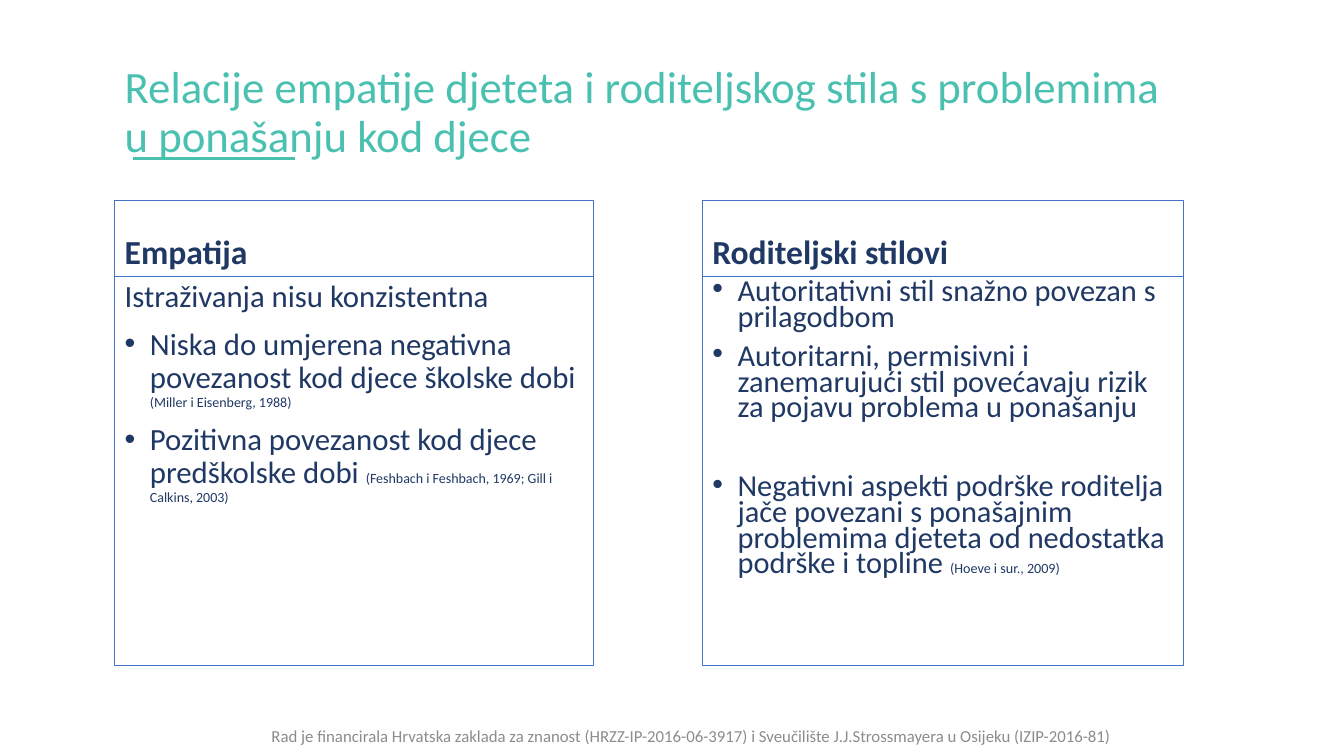
from pptx import Presentation
from pptx.dml.color import RGBColor
from pptx.enum.shapes import MSO_CONNECTOR as Connector
from pptx.enum.text import MSO_ANCHOR as Anchor, PP_ALIGN as Align
from pptx.oxml.ns import qn
from pptx.util import Pt
from lxml import etree

TEAL, NAVY, BLUE, GREY = "4AC1B0", "203864", "4472C4", "8C8C8C"
HEADING_HEIGHT = 54


def color(value):
    """Turn a hex string into a colour."""
    return RGBColor.from_string(value)


def add_box(slide, box, anchor=Anchor.TOP, outline=None):
    """Add a wrapping text box, outlined on request, and return its frame."""
    shape = slide.shapes.add_textbox(*(Pt(length) for length in box))
    if outline:
        shape.line.color.rgb = color(outline)
        shape.line.width = Pt(0.75)
    frame = shape.text_frame
    frame.word_wrap = True
    frame.vertical_anchor = anchor
    return frame


def add_bullet(paragraph):
    """Give a paragraph a hanging round bullet."""
    properties = paragraph._p.get_or_add_pPr()
    properties.set("marL", str(Pt(18)))
    properties.set("indent", str(Pt(-18)))
    etree.SubElement(properties, qn("a:buFont")).set("typeface", "Arial")
    etree.SubElement(properties, qn("a:buChar")).set("char", "•")


def write(frame, text, size, fill, citation="", citation_size=10, bold=False,
          bullet=False, before=0, spacing=0.9, align=Align.LEFT):
    """Write one paragraph, with an optional small citation at its end."""
    paragraph = frame.paragraphs[0]
    if paragraph.runs:
        paragraph = frame.add_paragraph()
    if bullet:
        add_bullet(paragraph)
    paragraph.alignment = align
    paragraph.line_spacing = spacing
    paragraph.space_before = Pt(before)
    for part, points in ((text, size), (citation, citation_size)):
        if part:
            run = paragraph.add_run()
            run.text = part
            run.font.name = "Calibri"
            run.font.size = Pt(points)
            run.font.bold = bold
            run.font.color.rgb = color(fill)


def add_title(slide, box, text):
    """Add the title and the short accent rule near its foot."""
    left, top, width, height = box
    rule_top = top + 84.2
    rule = slide.shapes.add_connector(
        Connector.STRAIGHT, Pt(left + 13), Pt(rule_top), Pt(left + 129), Pt(rule_top))
    rule.line.color.rgb = color(TEAL)
    rule.line.width = Pt(2.25)
    etree.SubElement(rule._element.spPr, qn("a:effectLst"))
    write(add_box(slide, box, Anchor.MIDDLE), text, 32, TEAL)


def add_column(slide, box, heading, items, **text_format):
    """Add a bordered heading with a bordered list below it."""
    left, top, width, height = box
    heading_frame = add_box(slide, (left, top, width, HEADING_HEIGHT), Anchor.BOTTOM, BLUE)
    write(heading_frame, heading, 24, NAVY, bold=True)
    body_box = (left, top + HEADING_HEIGHT, width, height - HEADING_HEIGHT)
    body_frame = add_box(slide, body_box, outline=BLUE)
    for item in items:
        write(body_frame, **{"fill": NAVY, "bullet": True, "before": 10, **text_format, **item})


def add_footer(slide, box, text):
    """Add the centred funding note."""
    write(add_box(slide, box, Anchor.MIDDLE), text, 12, GREY, spacing=1, align=Align.CENTER)


def main():
    """Build and save the slide."""
    presentation = Presentation()
    presentation.slide_width, presentation.slide_height = Pt(960), Pt(540)
    slide = presentation.slides.add_slide(presentation.slide_layouts[6])
    add_title(slide, (82, 28.8, 763.2, 104.4),
              "Relacije empatije djeteta i roditeljskog stila s problemima u ponašanju kod djece")
    add_column(slide, (82, 143.3, 342, 332), "Empatija", [
        {"text": "Istraživanja nisu konzistentna", "bullet": False, "before": 0},
        {"text": "Niska do umjerena negativna povezanost kod djece školske dobi ",
         "citation": "(Miller i Eisenberg, 1988)"},
        {"text": "Pozitivna povezanost kod djece predškolske dobi ",
         "citation": "(Feshbach i Feshbach, 1969; Gill i Calkins, 2003)"},
    ], size=22)
    add_column(slide, (501.8, 143.3, 343.4, 332), "Roditeljski stilovi", [
        {"text": "Autoritativni stil snažno povezan s prilagodbom", "before": 0},
        {"text": "Autoritarni, permisivni i zanemarujući stil povećavaju rizik "
                 "za pojavu problema u ponašanju"},
        {"text": "Negativni aspekti podrške roditelja jače povezani s ponašajnim "
                 "problemima djeteta od nedostatka podrške i topline ",
         "citation": "(Hoeve i sur., 2009)", "before": 38.4},
    ], size=21.7, citation_size=10.1, spacing=0.7)
    add_footer(slide, (110.2, 511.2, 767.5, 28.8),
               "Rad je financirala Hrvatska zaklada za znanost (HRZZ-IP-2016-06-3917) "
               "i Sveučilište J.J.Strossmayera u Osijeku (IZIP-2016-81)")
    presentation.save("out.pptx")


if __name__ == "__main__":
    main()
